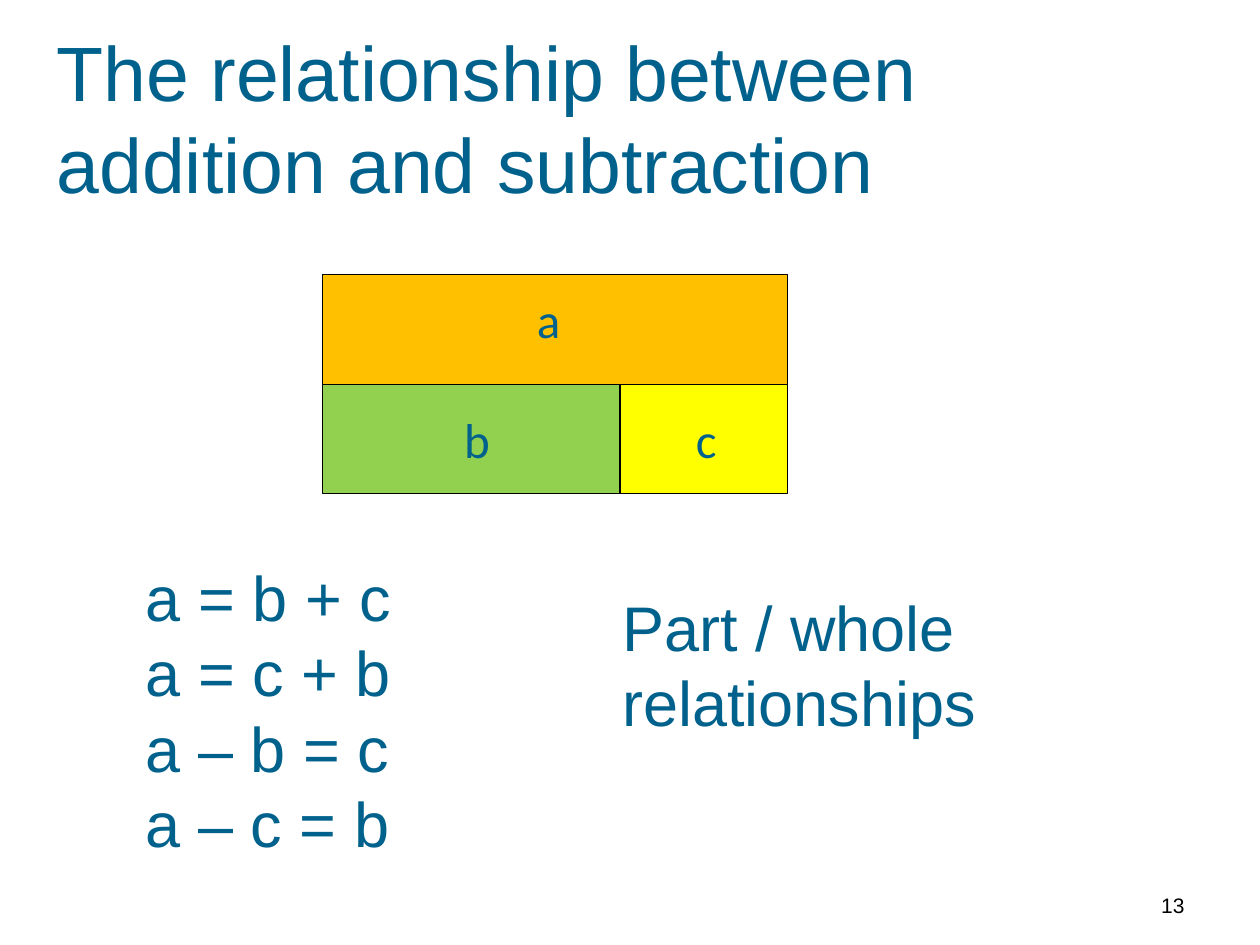
from dataclasses import dataclass
from pptx import Presentation
from pptx.dml.color import RGBColor as RGB
from pptx.enum.shapes import MSO_SHAPE as Shape
from pptx.enum.text import MSO_ANCHOR as Anchor, PP_ALIGN as Align
from pptx.util import Inches, Pt


@dataclass(frozen=True)
class Theme:
    ink: str = "00628C"
    black: str = "000000"
    amber: str = "FFC000"
    green: str = "92D050"
    yellow: str = "FFFF00"
    font: str = "Arial"
    label: str = "Calibri"
    title: int = 44
    body: int = 36
    mark: int = 28
    small: int = 12
    line: float = 0.75


THEME = Theme()
WIDE, HIGH = 10, 7.5
LEFT, TOP, ROW = 2.56, 2.18, 0.87
SPLIT, FULL = 2.36, 3.69


def add_text(slide, text, box, size, font=THEME.font, ink=THEME.ink,
             align=Align.LEFT, anchor=Anchor.TOP, wrap=True, after=0):
    frame = slide.shapes.add_textbox(*map(Inches, box)).text_frame
    frame.word_wrap = wrap
    frame.vertical_anchor = anchor
    frame.text = text
    for para in frame.paragraphs:
        para.alignment = align
        para.space_after = Pt(after)
        for run in para.runs:
            run.font.size = Pt(size)
            run.font.name = font
            run.font.color.rgb = RGB.from_string(ink)


def add_bar(slide, row, start, end, fill):
    box = LEFT + start, TOP + row * ROW, end - start, ROW
    bar = slide.shapes.add_shape(Shape.RECTANGLE, *map(Inches, box))
    bar.shadow.inherit = False
    bar.fill.solid()
    bar.fill.fore_color.rgb = RGB.from_string(fill)
    bar.line.color.rgb = RGB.from_string(THEME.black)
    bar.line.width = Pt(THEME.line)


def add_mark(slide, text, left, top):
    add_text(slide, text, (left, top, 0.57, 0.71), THEME.mark,
             font=THEME.label, align=Align.CENTER, after=10)


def add_model(slide):
    add_bar(slide, 0, 0, FULL, THEME.amber)
    add_bar(slide, 1, 0, SPLIT, THEME.green)
    add_bar(slide, 1, SPLIT, FULL, THEME.yellow)
    for text, left, top in (("a", 4.07, 2.25), ("b", 3.5, 3.2), ("c", 5.32, 3.2)):
        add_mark(slide, text, left, top)


def main():
    deck = Presentation()
    deck.slide_width, deck.slide_height = Inches(WIDE), Inches(HIGH)
    slide = deck.slides.add_slide(deck.slide_layouts[6])
    add_text(slide, "The relationship between addition and subtraction",
             (0.35, 0.29, 7.09, 1.42), THEME.title, anchor=Anchor.BOTTOM)
    add_text(slide, "13", (7.17, 6.83, 2.33, 0.5), THEME.small,
             ink=THEME.black, align=Align.RIGHT, anchor=Anchor.BOTTOM)
    add_model(slide)
    sums = "a = b + c", "a = c + b", "a – b = c", "a – c = b"
    add_text(slide, "\n".join(sums), (1.06, 4.38, 2.59, 2.52), THEME.body, wrap=False)
    add_text(slide, "Part / whole relationships", (4.84, 4.62, 4.41, 1.31), THEME.body)
    deck.save("out.pptx")


if __name__ == "__main__":
    main()
